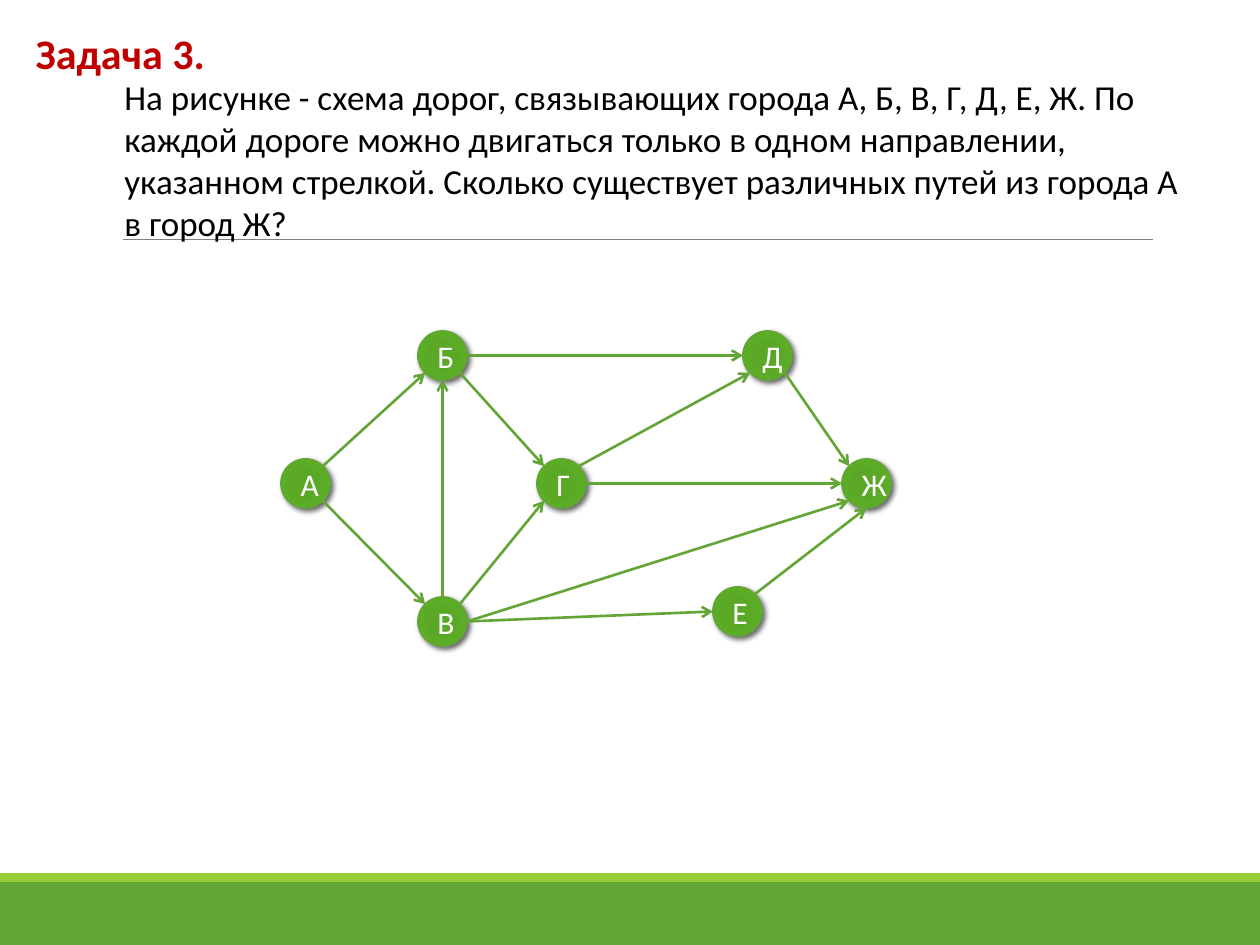
from dataclasses import dataclass
from math import cos, radians, sin

from lxml.etree import SubElement
from pptx import Presentation
from pptx.dml.color import RGBColor
from pptx.enum.shapes import MSO_CONNECTOR, MSO_SHAPE
from pptx.enum.text import MSO_ANCHOR, MSO_AUTO_SIZE, PP_ALIGN
from pptx.oxml import parse_xml
from pptx.oxml.ns import nsdecls, qn
from pptx.util import Emu, Pt

EMU_PER_PX = 914400 / 126
PAGE_WIDTH, PAGE_HEIGHT = 1260, 945


@dataclass(frozen=True)
class Theme:
    font: str = "Calibri"
    green: str = "63A537"
    lime: str = "99CB38"
    gray: str = "808080"
    red: str = "C00000"
    black: str = "000000"
    white: str = "FFFFFF"
    node_stops: tuple = ((0, "59A924"), (34, "5BA827"), (70, "5BAD25"), (100, "62AB31"))
    title_size: int = 24
    body_size: int = 20
    node_size: int = 18


THEME = Theme()

# Cities: left and top of each circle
NODE_SIZE = 49
CITIES = {
    "А": (281, 459), "Б": (418, 331), "В": (418, 597), "Г": (537, 459),
    "Д": (743, 331), "Ж": (842, 459), "Е": (713, 587),
}

# Circle connection sites run counterclockwise from the top, 45 degrees apart
TOP, TOP_LEFT, LEFT, BOTTOM_LEFT, BOTTOM, BOTTOM_RIGHT, RIGHT, TOP_RIGHT = range(8)
ROADS = [
    ("А", TOP_RIGHT, "Б", BOTTOM_LEFT),
    ("А", BOTTOM_RIGHT, "В", TOP_LEFT),
    ("В", TOP, "Б", BOTTOM),
    ("Б", RIGHT, "Д", LEFT),
    ("Б", BOTTOM_RIGHT, "Г", TOP_LEFT),
    ("В", TOP_RIGHT, "Г", BOTTOM_LEFT),
    ("В", RIGHT, "Ж", BOTTOM_LEFT),
    ("В", RIGHT, "Е", LEFT),
    ("Е", TOP_RIGHT, "Ж", BOTTOM),
    ("Г", RIGHT, "Ж", LEFT),
    ("Г", TOP_RIGHT, "Д", BOTTOM_LEFT),
    ("Д", BOTTOM_RIGHT, "Ж", TOP_LEFT),
]

TASK = (
    "На рисунке - схема дорог, связывающих города А, Б, В, Г, Д, Е, Ж. "
    "По каждой дороге можно двигаться только в одном направлении, указанном стрелкой. "
    "Сколько существует различных путей из города А в город Ж?"
)


def px(value):
    return Emu(round(value * EMU_PER_PX))


def write(shape, text, size, color, align=PP_ALIGN.LEFT, anchor=MSO_ANCHOR.TOP,
          wrap=True, bold=False):
    frame = shape.text_frame
    frame.text = text
    frame.word_wrap = wrap
    frame.vertical_anchor = anchor
    para = frame.paragraphs[0]
    para.alignment = align
    para.font.name = THEME.font
    para.font.size = Pt(size)
    para.font.bold = bold
    para.font.color.rgb = RGBColor.from_string(color)


def add_title(page, text, left, top, width, height):
    title = page.shapes.title
    title.left, title.top, title.width, title.height = map(px, (left, top, width, height))
    write(title, text, THEME.title_size, THEME.red, wrap=False, bold=True)
    title.text_frame.auto_size = MSO_AUTO_SIZE.SHAPE_TO_FIT_TEXT


def add_text(page, text, left, top, width, height):
    box = page.shapes.add_textbox(*map(px, (left, top, width, height)))
    write(box, text, THEME.body_size, THEME.black)
    box.text_frame.auto_size = MSO_AUTO_SIZE.SHAPE_TO_FIT_TEXT


def add_band(page, top, height, color):
    band = page.shapes.add_shape(MSO_SHAPE.RECTANGLE, *map(px, (0, top, PAGE_WIDTH, height)))
    band.shadow.inherit = False
    band.fill.solid()
    band.fill.fore_color.rgb = RGBColor.from_string(color)
    band.line.fill.background()


def add_line(page, start, end, color, width):
    line = page.shapes.add_connector(MSO_CONNECTOR.STRAIGHT, *map(px, (*start, *end)))
    line.line.color.rgb = RGBColor.from_string(color)
    line.line.width = Pt(width)
    SubElement(line._element.spPr, qn("a:effectLst"))
    return line


def add_city(page, name, left, top):
    city = page.shapes.add_shape(
        MSO_SHAPE.OVAL, *map(px, (left, top, NODE_SIZE, NODE_SIZE)))
    city.line.color.rgb = RGBColor.from_string(THEME.green)
    city.line.width = Pt(1)
    write(city, name, THEME.node_size, THEME.white, PP_ALIGN.CENTER, MSO_ANCHOR.MIDDLE)

    # Radial gradient and soft shadow
    stops = "".join(
        f'<a:gs pos="{place * 1000}"><a:srgbClr val="{color}"/></a:gs>'
        for place, color in THEME.node_stops)
    gradient = parse_xml(
        f'<a:gradFill {nsdecls("a")} rotWithShape="1"><a:gsLst>{stops}</a:gsLst>'
        '<a:path path="circle"><a:fillToRect l="100000" t="100000" r="100000" b="100000"/>'
        '</a:path></a:gradFill>')
    shadow = parse_xml(
        f'<a:effectLst {nsdecls("a")}><a:outerShdw blurRad="{Pt(3)}" dist="{Pt(2)}" '
        f'dir="2700000" rotWithShape="0"><a:srgbClr val="{THEME.black}">'
        '<a:alpha val="60000"/></a:srgbClr></a:outerShdw></a:effectLst>')
    properties = city._element.spPr
    properties.find(qn("a:prstGeom")).addnext(gradient)
    properties.append(shadow)
    return city


def site_point(name, site):
    left, top = CITIES[name]
    radius = NODE_SIZE / 2
    angle = radians(90 + 45 * site)
    return left + radius + radius * cos(angle), top + radius - radius * sin(angle)


def add_road(page, cities, origin, origin_site, target, target_site):
    road = add_line(page, site_point(origin, origin_site),
                    site_point(target, target_site), THEME.green, 1.5)
    SubElement(road.line._get_or_add_ln(), qn("a:tailEnd"), type="arrow")
    # Glue both ends to their circles
    glue = road._element.find(".//" + qn("p:cNvCxnSpPr"))
    for tag, name, site in (("a:stCxn", origin, origin_site), ("a:endCxn", target, target_site)):
        SubElement(glue, qn(tag), id=str(cities[name].shape_id), idx=str(site))


def main():
    deck = Presentation()
    deck.slide_width, deck.slide_height = px(PAGE_WIDTH), px(PAGE_HEIGHT)
    page = deck.slides.add_slide(deck.slide_layouts[5])

    # Footer bands and rule
    add_band(page, 882, 63, THEME.green)
    add_band(page, 873, 9, THEME.lime)
    add_line(page, (123, 239), (1153, 239), THEME.gray, 0.5)

    # Heading and task
    add_title(page, "Задача 3.", 23, 21, 197, 63)
    add_text(page, TASK, 112, 69, 1092, 183)

    # Road map
    cities = {name: add_city(page, name, *place) for name, place in CITIES.items()}
    for road in ROADS:
        add_road(page, cities, *road)

    deck.save("out.pptx")


if __name__ == "__main__":
    main()
